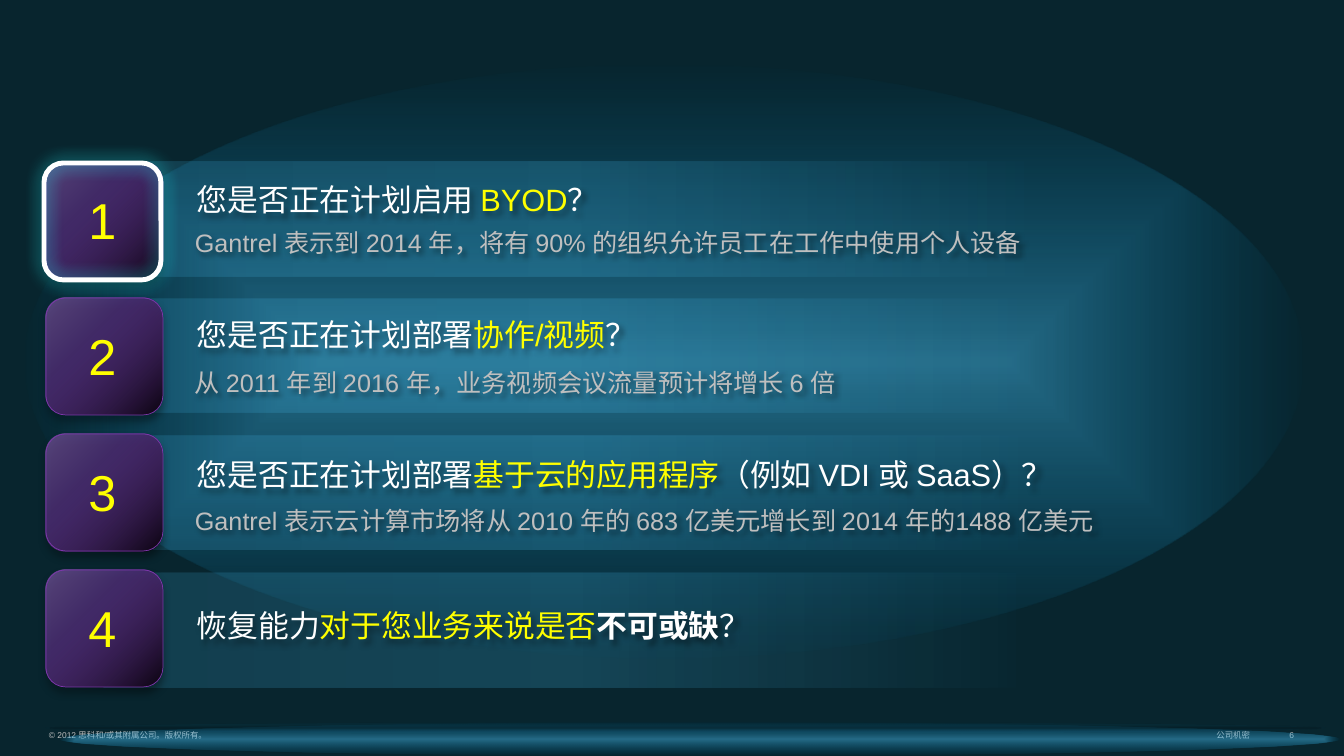
from lxml import etree
from pptx import Presentation
from pptx.dml.color import RGBColor
from pptx.enum.shapes import MSO_SHAPE as Shape
from pptx.enum.text import MSO_ANCHOR as Anchor, PP_ALIGN as Align
from pptx.oxml import parse_xml
from pptx.oxml.ns import nsdecls
from pptx.util import Pt

PX = 12192000 / 1344
WHITE = RGBColor(0xFF, 0xFF, 0xFF)
YELLOW = RGBColor(0xFF, 0xFF, 0x00)
SILVER = RGBColor(0xC0, 0xC0, 0xC0)
GREY = RGBColor(0xBF, 0xBF, 0xBF)
NAVY = RGBColor(0x08, 0x25, 0x2E)
BLACK = RGBColor(0x00, 0x00, 0x00)
SKY = RGBColor(0x4D, 0xCA, 0xFF)
BLUE = RGBColor(0x00, 0x96, 0xD6)
CYAN = RGBColor(0x26, 0xF0, 0xF3)
LILAC = RGBColor(0xA7, 0x6B, 0xCE)
PURPLE = RGBColor(0x7C, 0x37, 0xAA)
PLUM = RGBColor(0x0C, 0x05, 0x11)

# (question top, question runs, answer top, answer, bar left, bar width)
ROWS = [
    (176, [("您是否正在计划启用 ", WHITE), ("BYOD", YELLOW), ("？", WHITE)],
     222, "Gantrel 表示到 2014 年，将有 90% 的组织允许员工在工作中使用个人设备", 93, 1200),
    (311, [("您是否正在计划部署", WHITE), ("协作/视频", YELLOW), ("？", WHITE)],
     362, "从 2011 年到 2016 年，业务视频会议流量预计将增长 6 倍", 101, 1179),
    (451, [("您是否正在计划部署", WHITE), ("基于云的应用程序", YELLOW),
           ("（例如 VDI 或 SaaS）？", WHITE)],
     500, "Gantrel 表示云计算市场将从 2010 年的 683 亿美元增长到 2014 年的1488 亿美元", 106, 1175),
    (602, [("恢复能力", WHITE), ("对于您业务来说是否", YELLOW),
           ("不可或缺", WHITE, True), ("？", WHITE)],
     None, None, 104, 1175),
]
FOOTERS = [
    (39, 503, Align.LEFT, "© 2012 思科和/或其附属公司。版权所有。"),
    (1200, 60, Align.RIGHT, "公司机密"),
    (1276, 28, Align.RIGHT, "6"),
]
GLOWS = [((25, 65, 1279, 594), SKY, 42), ((60, 723, 1279, 33), SKY, 42),
         ((46, 723, 1279, 11), BLACK, 20)]
BAR_TOP, BAR_PITCH, BAR_HEIGHT = 162, 137, 114
BADGE_LEFT, BADGE_TOP, BADGE_PITCH, BADGE_SIZE = 46, 162, 136, 117
BAR_STOPS = [(0, SKY, 15), (40, SKY, 19), (78, SKY, 0)]
BADGE_STOPS = [(1, LILAC, 50), (37, PURPLE, 50), (99, PLUM, 100)]
CENTRE = '<a:path path="shape"><a:fillToRect l="50000" t="50000" r="50000" b="50000"/></a:path>'
CORNER = '<a:path path="circle"><a:fillToRect r="100000" b="100000"/></a:path>'
ACROSS = '<a:lin ang="0" scaled="0"/>'


def emu(*lengths):
    return [round(n * PX) for n in lengths]


def add_shape(kind, box, fill=None):
    sp = slide.shapes.add_shape(kind, *emu(*box))
    sp.shadow.inherit = False
    sp.line.fill.background()
    if fill is None:
        sp.fill.background()
    else:
        sp.fill.solid()
        sp.fill.fore_color.rgb = fill
    return sp


def add_gradient_shape(kind, box, stops, direction):
    """Stops are (position %, colour, opacity %)."""
    sp = add_shape(kind, box, NAVY)
    gs = "".join(
        f'<a:gs pos="{pos * 1000}"><a:srgbClr val="{colour}">'
        f'<a:alpha val="{opacity * 1000}"/></a:srgbClr></a:gs>'
        for pos, colour, opacity in stops)
    grad = parse_xml(f'<a:gradFill {nsdecls("a")} rotWithShape="1">'
                     f'<a:gsLst>{gs}</a:gsLst>{direction}</a:gradFill>')
    solid = sp.element.spPr.find("{*}solidFill")
    solid.getparent().replace(solid, grad)
    return sp


def add_shadow(sp, colour, opacity, blur, distance, angle):
    sp.shadow.inherit = False
    effects = sp.element.spPr.find("{*}effectLst")
    effects.append(parse_xml(
        f'<a:outerShdw {nsdecls("a")} blurRad="{Pt(blur)}" dist="{Pt(distance)}" '
        f'dir="{angle * 60000}" algn="ctr" rotWithShape="0"><a:srgbClr val="{colour}">'
        f'<a:alpha val="{opacity * 1000}"/></a:srgbClr></a:outerShdw>'))


def add_text(box, runs, size, align=Align.LEFT, anchor=Anchor.TOP, wrap=True):
    """Runs are (text, colour) or (text, colour, bold)."""
    sp = slide.shapes.add_textbox(*emu(*box))
    tf = sp.text_frame
    tf.word_wrap = wrap
    tf.vertical_anchor = anchor
    p = tf.paragraphs[0]
    p.alignment = align
    p.font.size = Pt(size)
    p.font.name = "Arial"
    for text, colour, *bold in runs:
        r = p.add_run()
        r.text = text
        r.font.size = Pt(size)
        r.font.name = "Arial"
        r.font.color.rgb = colour
        if bold:
            r.font.bold = True
    return sp


prs = Presentation()
prs.slide_width, prs.slide_height = emu(1344, 756)
slide = prs.slides.add_slide(prs.slide_layouts[6])
slide.background.fill.solid()
slide.background.fill.fore_color.rgb = NAVY

for left, width, align, text in FOOTERS:
    add_text((left, 726, width, 19), [(text, SILVER)], 6, align, Anchor.BOTTOM, False)

for box, colour, opacity in GLOWS:
    add_gradient_shape(Shape.OVAL, box, [(1, colour, opacity), (100, BLUE, 0)], CENTRE)

for i, (q_top, question, a_top, answer, bar_left, bar_width) in enumerate(ROWS):
    bar = (bar_left, BAR_TOP + i * BAR_PITCH, bar_width, BAR_HEIGHT)
    add_gradient_shape(Shape.RECTANGLE, bar, BAR_STOPS, ACROSS)
    texts = [add_text((187, q_top, 1150, 47), question, 22)]
    if answer:
        texts.append(add_text((185, a_top, 1092, 40), [(answer, GREY)], 18))
    for sp in texts:
        add_shadow(sp, BLACK, 40, 4, 3, 45)

for i in range(len(ROWS)):
    top = BADGE_TOP + i * BADGE_PITCH
    badge = (BADGE_LEFT, top, BADGE_SIZE, BADGE_SIZE)
    add_shape(Shape.ROUNDED_RECTANGLE, badge, NAVY)
    sp = add_gradient_shape(Shape.ROUNDED_RECTANGLE, badge, BADGE_STOPS, CORNER)
    sp.line.color.rgb = PURPLE
    sp.line.width = Pt(0.5)
    add_shadow(sp, BLACK, 40, 6, 4, 90)
    add_text((78, top + 22, 49, 72), [(str(i + 1), YELLOW)], 36, Align.CENTER)

ring = add_shape(Shape.ROUNDED_RECTANGLE, (44, 163, BADGE_SIZE, BADGE_SIZE))
ring.line.color.rgb = WHITE
ring.line.width = Pt(3.5)
add_shadow(ring, CYAN, 81, 13, 0, 90)

prs.save("out.pptx")
